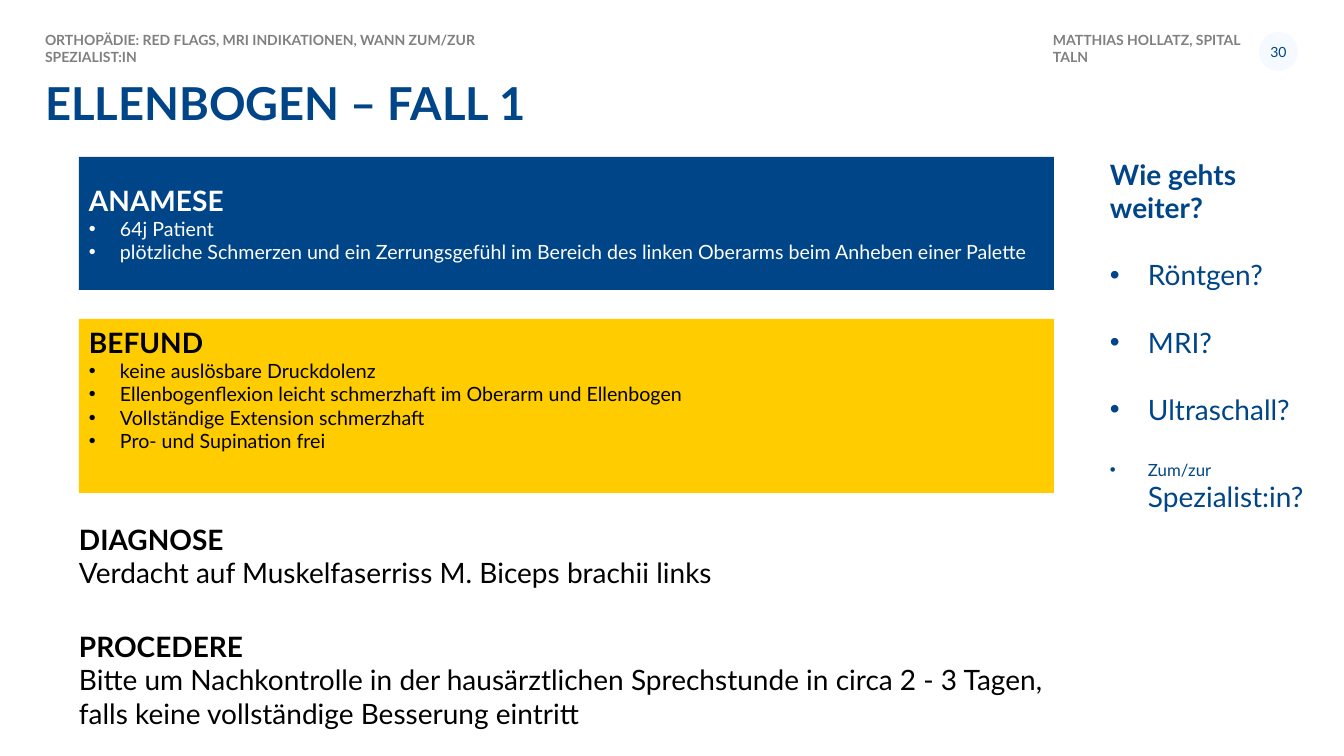
"""Build the elbow case slide with its findings, diagnosis and next steps."""
from dataclasses import dataclass

from lxml import etree
from pptx import Presentation
from pptx import util as u
from pptx.dml.color import RGBColor
from pptx.enum import shapes, text
from pptx.oxml import ns

EMU_PER_PX = 914400 / 100.8
FONT = "Lato"
COLORS = {
    "blue": "004587",
    "pale": "F4FAFF",
    "grey": "808080",
    "yellow": "FFCC00",
    "white": "FFFFFF",
    "black": "000000",
}
LEFT = 79
BOX_WIDTH = 975


@dataclass(frozen=True)
class Line:
    content: str
    size: float = 20
    bold: bool = False
    indent: int = 0
    before: int = 0
    spacing: float = 1.0
    lead: str = ""
    lead_size: int = 12


@dataclass(frozen=True)
class Block:
    area: tuple[int, int, int, int]
    color: str
    lines: list[Line]
    fill: str = ""
    geometry: shapes.MSO_SHAPE = shapes.MSO_SHAPE.RECTANGLE
    insets: tuple[int, int, int, int] = (0, 0, 0, 0)
    align: text.PP_ALIGN = text.PP_ALIGN.LEFT


def px(value: int) -> u.Emu:
    """Turn pixels into EMU."""
    return u.Emu(round(value * EMU_PER_PX))


def rgb(name: str) -> RGBColor:
    """Look up a named colour."""
    return RGBColor.from_string(COLORS[name])


def case_lines(heading: str, items: list[str]) -> list[Line]:
    """Describe a bold heading followed by small bullets."""
    return [Line(heading, bold=True)] + [Line(item, 14, indent=31) for item in items]


def set_bullet(paragraph, indent: int) -> None:
    """Give a paragraph a hanging bullet, or none without an indent."""
    properties = paragraph._p.get_or_add_pPr()
    properties.set("marL", str(px(indent)))
    properties.set("indent", str(-px(indent)))
    if indent:
        font = etree.SubElement(properties, ns.qn("a:buFont"))
        font.set("typeface", "Arial")
        etree.SubElement(properties, ns.qn("a:buChar")).set("char", "•")
    else:
        etree.SubElement(properties, ns.qn("a:buNone"))


def add_run(paragraph, content: str, size: float, bold: bool, color: str) -> None:
    """Append formatted text to a paragraph."""
    run = paragraph.add_run()
    run.text = content
    formats = {"name": FONT, "size": u.Pt(size), "bold": bold}
    for name, value in formats.items():
        setattr(run.font, name, value)
    run.font.color.rgb = rgb(color)


def write_block(shape, block: Block) -> None:
    """Place a shape and write its lines."""
    for name, value in zip(("left", "top", "width", "height"), block.area):
        setattr(shape, name, px(value))
    frame = shape.text_frame
    anchor = text.MSO_ANCHOR.MIDDLE if block.fill else text.MSO_ANCHOR.TOP
    formats = {
        "word_wrap": True,
        "auto_size": text.MSO_AUTO_SIZE.NONE,
        "vertical_anchor": anchor,
    }
    sides = ("margin_left", "margin_top", "margin_right", "margin_bottom")
    formats.update(zip(sides, map(px, block.insets)))
    for name, value in formats.items():
        setattr(frame, name, value)
    for index, line in enumerate(block.lines):
        paragraph = frame.add_paragraph() if index else frame.paragraphs[0]
        paragraph_formats = {
            "alignment": block.align,
            "line_spacing": line.spacing,
            "space_before": u.Pt(line.before),
            "space_after": u.Pt(0),
        }
        for name, value in paragraph_formats.items():
            setattr(paragraph, name, value)
        set_bullet(paragraph, line.indent)
        if line.lead:
            add_run(paragraph, line.lead, line.lead_size, line.bold, block.color)
        add_run(paragraph, line.content, line.size, line.bold, block.color)


def add_block(slide, block: Block) -> None:
    """Draw a filled shape or a plain text box."""
    area = [px(value) for value in block.area]
    if block.fill:
        shape = slide.shapes.add_shape(block.geometry, *area)
        shape.shadow.inherit = False
        shape.fill.solid()
        shape.fill.fore_color.rgb = rgb(block.fill)
        shape.line.fill.background()
    else:
        shape = slide.shapes.add_textbox(*area)
    write_block(shape, block)


TITLE = Block(
    (45, 81, 1254, 51), "blue",
    [Line("ELLENBOGEN – FALL 1", 32.4, bold=True, spacing=0.9)],
)
QUESTIONS = Block(
    (1110, 157, 223, 538), "blue",
    [Line("Wie gehts weiter?", bold=True)]
    + [Line(item, indent=38, before=24) for item in ("Röntgen?", "MRI?", "Ultraschall?")]
    + [Line("Spezialist:in?", indent=38, before=24, lead="Zum/zur ")],
)
BLOCKS = [
    Block(
        (1259, 32, 39, 39), "blue", [Line("30", 10)], fill="pale",
        geometry=shapes.MSO_SHAPE.OVAL, align=text.PP_ALIGN.CENTER,
    ),
    Block(
        (45, 32, 488, 21), "grey",
        [Line("ORTHOPÄDIE: RED FLAGS, MRI INDIKATIONEN, WANN ZUM/ZUR SPEZIALIST:IN", 10, True)],
    ),
    Block((1053, 32, 206, 21), "grey", [Line("MATTHIAS HOLLATZ, SPITAL TALN", 10, True)]),
    Block(
        (LEFT, 157, BOX_WIDTH, 133), "white",
        case_lines("ANAMESE", [
            "64j Patient",
            "plötzliche Schmerzen und ein Zerrungsgefühl im Bereich des linken Oberarms "
            "beim Anheben einer Palette",
        ]),
        fill="blue", insets=(10, 5, 10, 5),
    ),
    Block(
        (LEFT, 319, BOX_WIDTH, 174), "black",
        case_lines("BEFUND", [
            "keine auslösbare Druckdolenz",
            "Ellenbogenflexion leicht schmerzhaft im Oberarm und Ellenbogen",
            "Vollständige Extension schmerzhaft",
            "Pro- und Supination frei",
        ]),
        fill="yellow", insets=(10, 5, 10, 39),
    ),
    Block(
        (LEFT, 522, 965, 81), "black",
        [Line("DIAGNOSE", bold=True),
         Line("Verdacht auf Muskelfaserriss M. Biceps brachii links")],
    ),
    Block(
        (LEFT, 629, BOX_WIDTH, 93), "black",
        [Line("PROCEDERE", bold=True),
         Line("Bitte um Nachkontrolle in der hausärztlichen Sprechstunde in circa 2 - 3 Tagen, "
              "falls keine vollständige Besserung eintritt")],
    ),
]


def main() -> None:
    """Assemble and save the slide."""
    presentation = Presentation()
    presentation.slide_width = px(1344)
    presentation.slide_height = px(756)
    slide = presentation.slides.add_slide(presentation.slide_layouts[1])
    write_block(slide.shapes.title, TITLE)
    write_block(slide.placeholders[1], QUESTIONS)
    for block in BLOCKS:
        add_block(slide, block)
    presentation.save("out.pptx")


if __name__ == "__main__":
    main()
